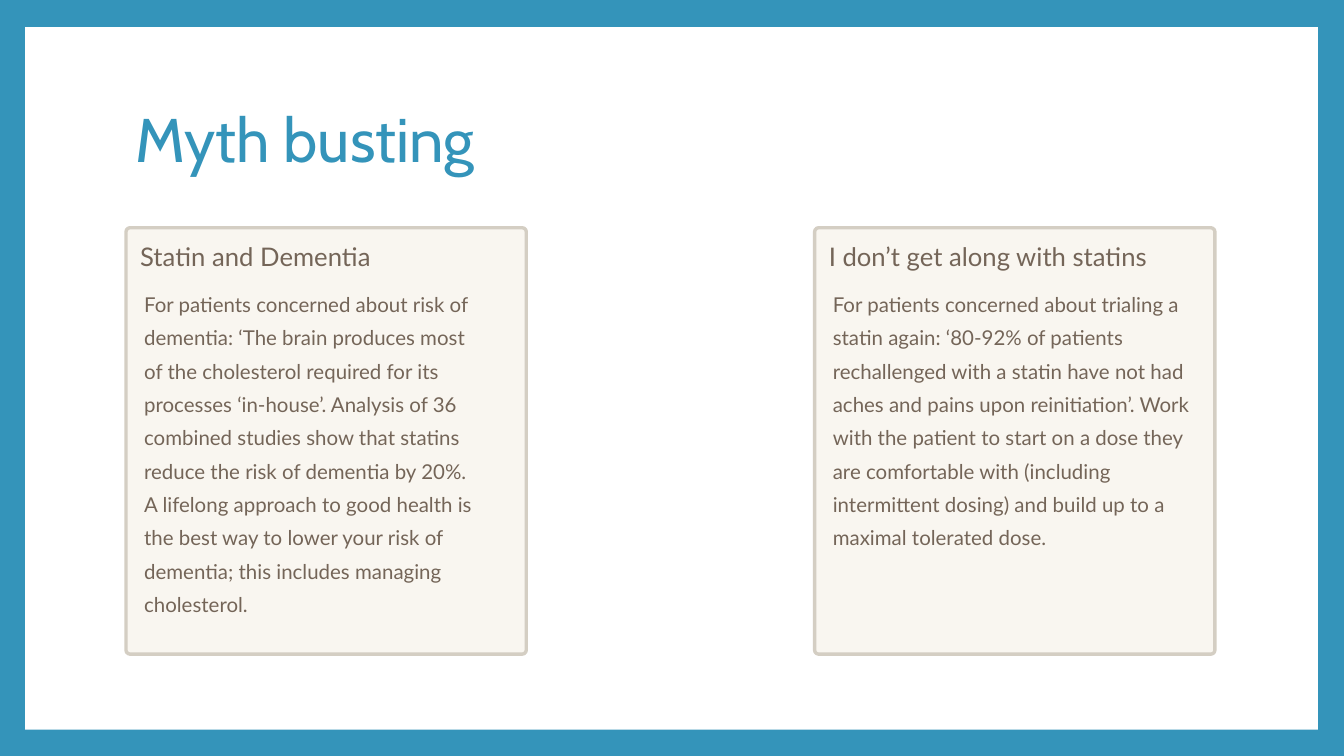
from pptx import Presentation
from pptx.dml.color import RGBColor
from pptx.enum.shapes import MSO_SHAPE
from pptx.enum.text import MSO_ANCHOR
from pptx.util import Inches, Pt

RECT, ROUNDED = MSO_SHAPE.RECTANGLE, MSO_SHAPE.ROUNDED_RECTANGLE
TOP, MIDDLE = MSO_ANCHOR.TOP, MSO_ANCHOR.MIDDLE

WIDTH, HEIGHT = 13.33, 7.5
MARGIN = 1.25
CARD_TOP, CARD_W, CARD_H = 2.26, 3.97, 4.23
CARD_STEP = 6.83
HEADING_W = 3.65

COLORS = {
    "accent": "3494BA",
    "page": "FFFFFF",
    "card": "F9F6F0",
    "border": "D4CEC3",
    "body": "746558",
}

# heading, body, body width
MYTHS = [
    ("Statin and Dementia",
     "For patients concerned about risk of dementia: ‘The brain produces most of the "
     "cholesterol required for its processes ‘in-house’. Analysis of 36 combined studies "
     "show that statins reduce the risk of dementia by 20%. A lifelong approach to good "
     "health is the best way to lower your risk of dementia; this includes managing "
     "cholesterol.", 3.36),
    ("I don’t get along with statins",
     "For patients concerned about trialing a statin again: ‘80-92% of patients "
     "rechallenged with a statin have not had aches and pains upon reinitiation’. Work "
     "with the patient to start on a dose they are comfortable with (including "
     "intermittent dosing) and build up to a maximal tolerated dose.", 3.65),
]


def rgb(name):
    return RGBColor.from_string(COLORS[name])


def add_panel(slide, kind, box, fill, line=None, radius=None):
    sp = slide.shapes.add_shape(kind, *map(Inches, box))
    sp.shadow.inherit = False
    sp.fill.solid()
    sp.fill.fore_color.rgb = rgb(fill)
    if line:
        sp.line.color.rgb = rgb(line)
        sp.line.width = Pt(2.4)
    else:
        sp.line.fill.background()
    if radius is not None:
        sp.adjustments[0] = radius


def add_text(slide, text, box, size, spacing, font="Lato", color="body",
             inset=0, anchor=TOP):
    tf = slide.shapes.add_textbox(*map(Inches, box)).text_frame
    tf.word_wrap = True
    tf.vertical_anchor = anchor
    tf.margin_left = tf.margin_right = Inches(inset)
    tf.margin_top = tf.margin_bottom = Inches(inset / 2)
    p = tf.paragraphs[0]
    p.line_spacing = spacing
    r = p.add_run()
    r.text = text
    r.font.name = font
    r.font.size = Pt(size)
    r.font.color.rgb = rgb(color)


def add_card(slide, left, heading, body, body_width):
    add_panel(slide, ROUNDED, (left, CARD_TOP, CARD_W, CARD_H), "card", "border", 0.01)
    add_text(slide, heading, (left + 0.14, CARD_TOP + 0.12, HEADING_W, 0.32),
             18.3, Pt(22.9))
    add_text(slide, body, (left + 0.18, CARD_TOP + 0.55, body_width, 3.34),
             14.6, Pt(23.8))


def main():
    prs = Presentation()
    prs.slide_width, prs.slide_height = Inches(WIDTH), Inches(HEIGHT)
    slide = prs.slides.add_slide(prs.slide_layouts[6])
    slide.background.fill.solid()
    slide.background.fill.fore_color.rgb = rgb("accent")
    add_panel(slide, RECT, (0.25, 0.27, 12.82, 6.97), "page")
    add_text(slide, "Myth busting", (MARGIN, 0.67, 10.8, 1.48), 44, 0.9,
             font="Cabin", color="accent", inset=0.1, anchor=MIDDLE)
    for i, myth in enumerate(MYTHS):
        add_card(slide, MARGIN + i * CARD_STEP, *myth)
    prs.save("out.pptx")


if __name__ == "__main__":
    main()
